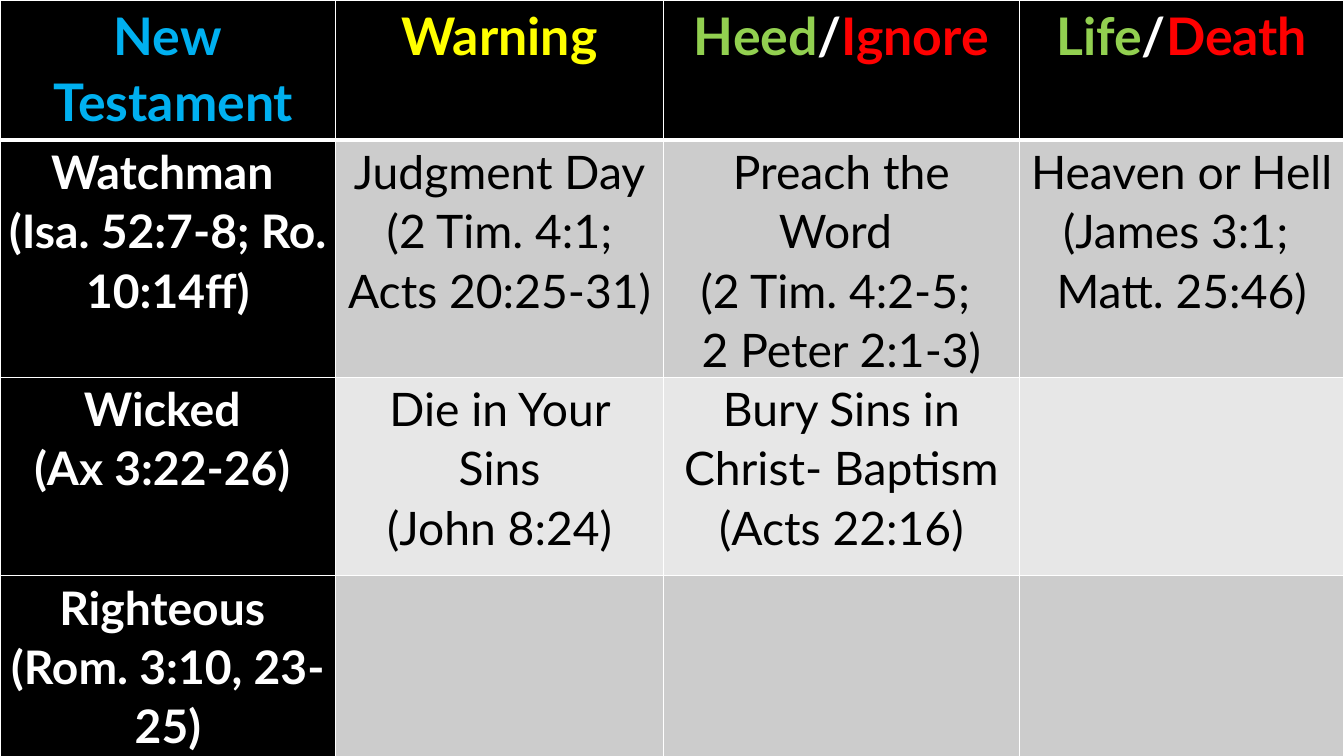
from pptx import Presentation
from pptx.dml.color import RGBColor
from pptx.enum.text import PP_ALIGN
from pptx.oxml import parse_xml
from pptx.oxml.ns import nsdecls
from pptx.util import Inches, Pt

BLACK, WHITE, GREEN, RED = "000000", "FFFFFF", "92D050", "FF0000"
BAND_FILLS = ["CCCCCC", "E7E7E7"]
COLUMN_WIDTHS = [3.33, 3.25, 3.53, 3.22]
SIDE_MARGINS = [0.07, 0.07, 0.1, 0.07]  # the third column wraps earlier
ROW_HEIGHTS = [1.39, 2.09, 1.97, 2.38]

# Header cells: paragraphs of (text, colour) runs
HEADER = [
    [[("New", "00B0F0")], [(" Testament", "00B0F0")]],
    [[("Warning", "FFFF00")]],
    [[("Heed", GREEN), ("/", WHITE), ("Ignore", RED)]],
    [[("Life", GREEN), ("/", WHITE), ("Death", RED)]],
]

# Body cells: paragraphs of plain text
BODY = [
    [["Watchman ", "(Isa. 52:7-8; Ro. 10:14ff)"],
     ["Judgment Day", "(2 Tim. 4:1; Acts 20:25-31)"],
     ["Preach the Word ", "(2 Tim. 4:2-5; ", "2 Peter 2:1-3)"],
     ["Heaven or Hell (James 3:1; ", "Matt. 25:46)"]],
    [["Wicked ", "(Ax 3:22-26) "],
     ["Die in Your Sins", "(John 8:24)"],
     ["Bury Sins in Christ- Baptism (Acts 22:16)"],
     []],
    [["Righteous ", "(Rom. 3:10, 23-25)"], [], [], []],
]


def color(value):
    return RGBColor.from_string(value)


def style_cell(cell, fill, margin, top, bottom):
    """Set margins, white borders and fill; border widths are in points."""
    cell.margin_left = cell.margin_right = Inches(margin)
    cell.margin_top = cell.margin_bottom = 0
    properties = cell._tc.get_or_add_tcPr()
    for side, width in (("L", 1), ("R", 1), ("T", top), ("B", bottom)):
        properties.append(parse_xml(
            f'<a:ln{side} {nsdecls("a")} w="{Pt(width)}"><a:solidFill>'
            f'<a:srgbClr val="{WHITE}"/></a:solidFill></a:ln{side}>'))
    cell.fill.solid()
    cell.fill.fore_color.rgb = color(fill)


# Deck and page
deck = Presentation()
deck.slide_width, deck.slide_height = Inches(13.33), Inches(7.5)
page = deck.slides.add_slide(deck.slide_layouts[6])

# Table grid
table = page.shapes.add_table(
    len(ROW_HEIGHTS), len(COLUMN_WIDTHS), 0, 0,
    Inches(sum(COLUMN_WIDTHS)), Inches(sum(ROW_HEIGHTS))).table
table.first_row = table.horz_banding = False
for column, width in zip(table.columns, COLUMN_WIDTHS):
    column.width = Inches(width)
for row, height in zip(table.rows, ROW_HEIGHTS):
    row.height = Inches(height)

# Body text is white in the first column and black elsewhere
rows = [HEADER]
for body_row in BODY:
    rows.append([[[(text, BLACK if c else WHITE)] for text in paragraphs]
                 for c, paragraphs in enumerate(body_row)])

# Cells
for r, cells in enumerate(rows):
    for c, paragraphs in enumerate(cells):
        cell = table.cell(r, c)
        heading = r == 0 or c == 0
        style_cell(cell, BLACK if heading else BAND_FILLS[(r - 1) % 2],
                   SIDE_MARGINS[c],
                   top=3 if r == 1 else 1, bottom=3 if r == 0 else 1)
        frame = cell.text_frame
        for i, runs in enumerate(paragraphs):
            para = frame.add_paragraph() if i else frame.paragraphs[0]
            para.alignment = PP_ALIGN.CENTER
            para.line_spacing = 1.07
            for text, text_color in runs:
                span = para.add_run()
                span.text = text
                span.font.name = "Lato"
                span.font.size = Pt(33 if r else 37)
                span.font.bold = heading
                span.font.color.rgb = color(text_color)

deck.save("out.pptx")
